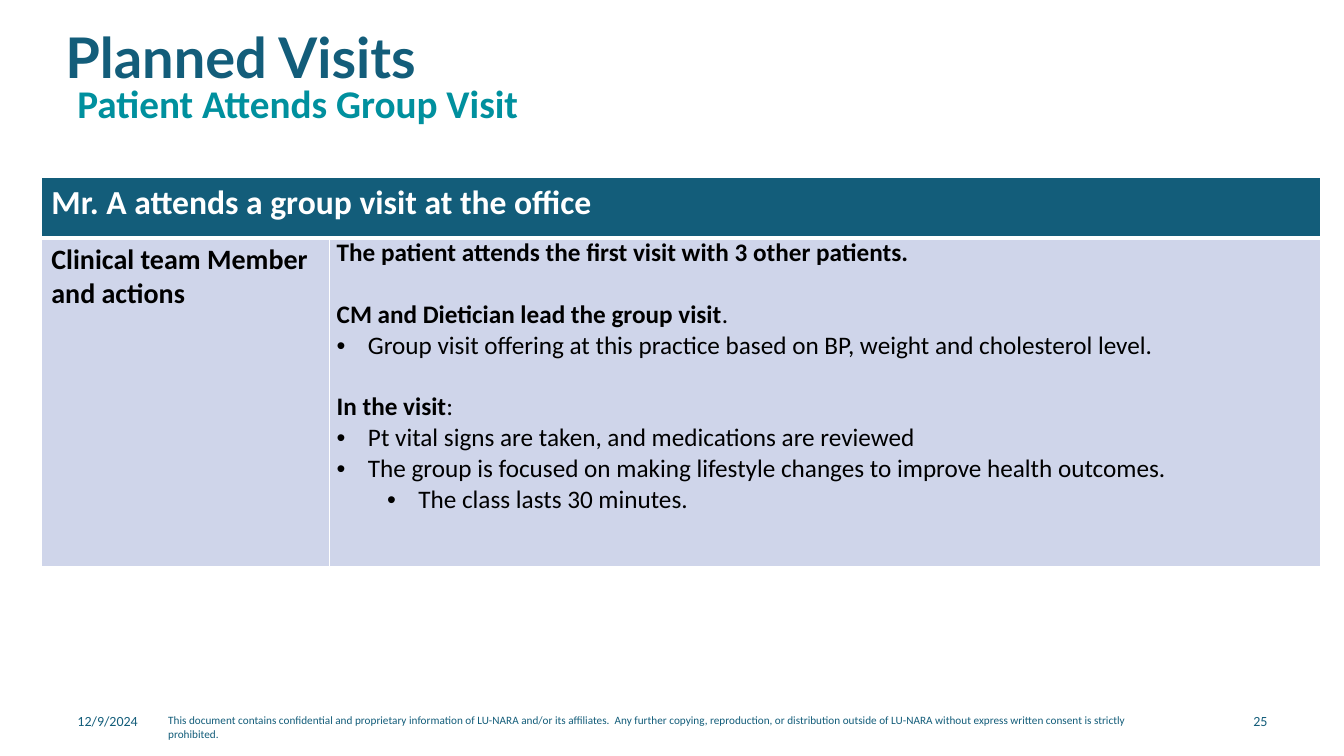
from lxml import etree
from pptx import Presentation
from pptx.dml.color import RGBColor
from pptx.enum.text import MSO_ANCHOR, PP_ALIGN
from pptx.oxml.ns import qn
from pptx.util import Pt

PX = 9144
TOP, MIDDLE, BOTTOM = MSO_ANCHOR.TOP, MSO_ANCHOR.MIDDLE, MSO_ANCHOR.BOTTOM
LEFT, RIGHT = PP_ALIGN.LEFT, PP_ALIGN.RIGHT
NAVY, TEAL, LAVENDER, WHITE, BLACK = "135D7A", "00909E", "CFD5EA", "FFFFFF", "000000"

NOTICE = (
    "This document contains confidential and proprietary information of LU-NARA and/or its affiliates.\u00a0 "
    "Any further copying, reproduction, or distribution outside of LU-NARA without express written consent "
    "is strictly prohibited."
)
ACTIONS = [
    ([("The patient attends the first visit with 3 other patients.", True)], None, 0),
    ([("CM and Dietician lead the group visit", True), (".", False)], None, 22),
    ([("Group visit offering at this practice based on BP, weight and cholesterol level.", False)], 0, 0),
    ([("In the visit", True), (":", False)], None, 22),
    ([("Pt vital signs are taken, and medications are reviewed", False)], 0, 0),
    ([("The group is focused on making lifestyle changes to improve health outcomes.", False)], 0, 0),
    ([("The class lasts 30 minutes.", False)], 1, 0),
]


def px(n):
    return int(n * PX)


def rgb(value):
    return RGBColor.from_string(value)


def add_run(p, text, size, color, bold=False, name="Calibri"):
    r = p.add_run()
    r.text = text
    for key, value in {"size": Pt(size), "bold": bold, "name": name}.items():
        setattr(r.font, key, value)
    r.font.color.rgb = rgb(color)


def add_text(slide, box, text, size, color, bold=False, name="Calibri", anchor=TOP, align=LEFT, spacing=1.0):
    tf = slide.shapes.add_textbox(*map(px, box)).text_frame
    tf.word_wrap = True
    tf.vertical_anchor = anchor
    p = tf.paragraphs[0]
    for key, value in {"alignment": align, "line_spacing": spacing}.items():
        setattr(p, key, value)
    add_run(p, text, size, color, bold, name)


def add_bullet(p, level):
    p.level = level
    pPr = p._p.get_or_add_pPr()
    pPr.set("marL", str(px(31 + 50 * level)))
    pPr.set("indent", str(px(-31)))
    etree.SubElement(pPr, qn("a:buFont")).set("typeface", "Arial")
    etree.SubElement(pPr, qn("a:buChar")).set("char", "•")


def style_cell(cell, fill, bottom=1, top=1):
    tcPr = cell._tc.get_or_add_tcPr()
    for tag, width in {"lnL": 1, "lnR": 1, "lnT": top, "lnB": bottom}.items():
        ln = etree.SubElement(tcPr, qn("a:" + tag), w=str(Pt(width)))
        solid = etree.SubElement(ln, qn("a:solidFill"))
        etree.SubElement(solid, qn("a:srgbClr")).set("val", WHITE)
    cell.fill.solid()
    cell.fill.fore_color.rgb = rgb(fill)


def add_heading(slide, x, y, w):
    add_text(slide, (x, y, w, 62), "Planned Visits", 40, NAVY, True, "Lato", spacing=0.9)
    add_text(slide, (x + 12, y + 16, w - 9, 90), "Patient Attends Group Visit", 28, TEAL, True,
             anchor=BOTTOM, spacing=0.9)


def add_visit_table(slide, x, y, w, h):
    label_w, header_h = 286, 60
    table = slide.shapes.add_table(2, 2, *map(px, (x, y, w, h))).table
    for column, width in zip(table.columns, (label_w, w - label_w)):
        column.width = px(width)
    for row, height in zip(table.rows, (header_h, h - header_h)):
        row.height = px(height)
    for i in range(2):
        style_cell(table.cell(0, i), NAVY, bottom=3)
        style_cell(table.cell(1, i), LAVENDER, top=3)

    header, label, actions = table.cell(0, 0), table.cell(1, 0), table.cell(1, 1)
    header.merge(table.cell(0, 1))
    add_run(header.text_frame.paragraphs[0], "Mr. A attends a group visit at the office", 24, WHITE, True)
    add_run(label.text_frame.paragraphs[0], "Clinical team Member and actions", 20, BLACK, True)

    margins = {"margin_left": 7, "margin_right": 7, "margin_top": 0, "margin_bottom": 0}
    for key, value in margins.items():
        setattr(actions, key, px(value))
    tf = actions.text_frame
    for i, (runs, level, before) in enumerate(ACTIONS):
        p = tf.add_paragraph() if i else tf.paragraphs[0]
        if before:
            p.space_before = Pt(before)
        if level is not None:
            add_bullet(p, level)
        for text, bold in runs:
            add_run(p, text, 18, BLACK, bold)


def add_footer(slide, x, y, w, h):
    side_w = 101
    add_text(slide, (x, y, side_w, h), "12/9/2024", 10, NAVY, anchor=MIDDLE)
    add_text(slide, (x + w - side_w, y, side_w, h), "25", 10, NAVY, anchor=MIDDLE, align=RIGHT)
    add_text(slide, (x + 90, y + 8, 1020, 32), NOTICE, 8, NAVY)


def main():
    prs = Presentation()
    prs.slide_width, prs.slide_height = px(1333), px(750)
    slide = prs.slides.add_slide(prs.slide_layouts[6])
    add_heading(slide, 55, 25, 1175)
    add_visit_table(slide, 41, 176, 1269, 386)
    add_footer(slide, 67, 695, 1200, 40)
    prs.save("out.pptx")


if __name__ == "__main__":
    main()
